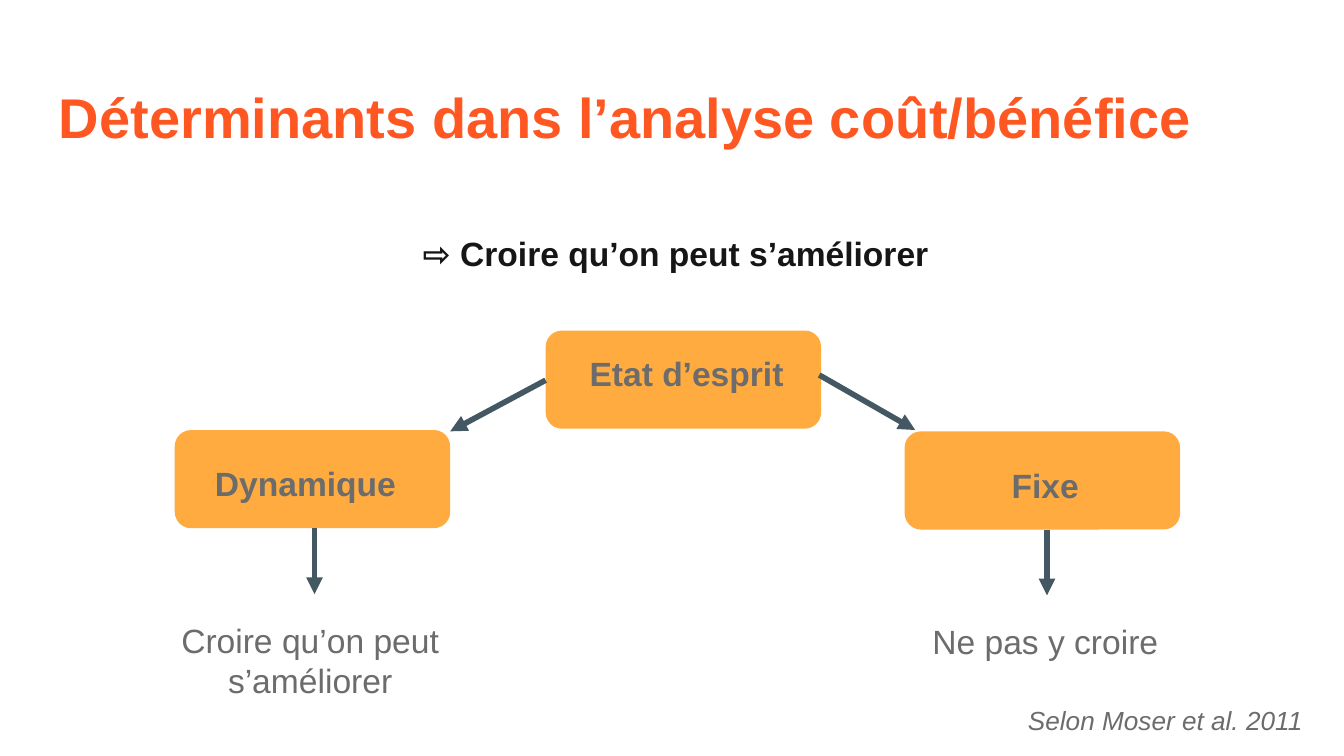
from pptx import Presentation
from pptx.util import Pt
from pptx.dml.color import RGBColor
from pptx.enum.shapes import MSO_CONNECTOR, MSO_SHAPE
from pptx.enum.text import PP_ALIGN
from pptx.oxml.ns import qn
from lxml.etree import SubElement

ORANGE, AMBER, BLACK, GREY, SLATE = "FF5722", "FFAB40", "161616", "6C6C6C", "435863"
CARD_WIDTH, CARD_HEIGHT = 147.6, 52.6


def color(hex_value):
    return RGBColor.from_string(hex_value)


def add_text(slide, box, lines, size=18, hex_value=GREY, bold=True, italic=False,
             align=PP_ALIGN.CENTER, inset=7.2, indent=0, wrap=True):
    frame = slide.shapes.add_textbox(*map(Pt, box)).text_frame
    frame.word_wrap = wrap
    frame.margin_top = frame.margin_bottom = Pt(inset)
    frame.text = "\n".join(lines)
    for paragraph in frame.paragraphs:
        paragraph.alignment = align
        if indent:
            paragraph._p.get_or_add_pPr().set("marL", str(Pt(indent)))
        for run in paragraph.runs:
            font = run.font
            font.name, font.size = "Arial", Pt(size)
            font.bold, font.italic = bold, italic
            font.color.rgb = color(hex_value)
    return frame


def add_card(slide, left, top):
    card = slide.shapes.add_shape(
        MSO_SHAPE.ROUNDED_RECTANGLE, Pt(left), Pt(top), Pt(CARD_WIDTH), Pt(CARD_HEIGHT))
    card.shadow.inherit = False
    card.fill.solid()
    card.fill.fore_color.rgb = color(AMBER)
    card.line.fill.background()


def add_arrow(slide, start, end):
    arrow = slide.shapes.add_connector(MSO_CONNECTOR.STRAIGHT, *map(Pt, (*start, *end)))
    arrow.line.color.rgb = color(SLATE)
    arrow.line.width = Pt(3)
    SubElement(arrow.line._get_or_add_ln(), qn("a:tailEnd"), type="triangle")
    SubElement(arrow._element.spPr, qn("a:effectLst"))


def add_header(slide, left, top, width):
    add_text(slide, (left, top, width, 45.4), ["Déterminants dans l’analyse coût/bénéfice"],
             size=30, hex_value=ORANGE, align=PP_ALIGN.LEFT)
    add_text(slide, (left, top + 80.5, width, 38), ["⇨ Croire qu’on peut s’améliorer "],
             hex_value=BLACK, indent=9)


def add_root(slide, left, top):
    add_card(slide, left, top)
    add_text(slide, (left + 6.5, top + 8.5, 134, 28.8), ["Etat d’esprit "],
             inset=3.6, indent=9, wrap=False)


def add_branch(slide, left, top, label, outcome, text_offset, stem_offset):
    add_card(slide, left, top)
    frame = add_text(slide, (left + text_offset, top + 10.6, 238.3, 139),
                     [label, outcome], indent=9)
    result = frame.paragraphs[1]
    result.space_before = Pt(62.1)
    result.runs[0].font.bold = False
    bottom = top + CARD_HEIGHT
    add_arrow(slide, (left + stem_offset, bottom), (left + stem_offset, bottom + 35.3))


def add_mindset_tree(slide, left, top):
    root_left, fixed_left, branch_top = left + 198.7, left + 391, top + 53.3
    add_root(slide, root_left, top)
    add_branch(slide, left, branch_top, "Dynamique ", "Croire qu’on peut s’améliorer",
               -51.1, 74.9)
    add_branch(slide, fixed_left, branch_top + 0.7, "Fixe", "Ne pas y croire", -48.3, 76.3)
    add_arrow(slide, (root_left, top + 26.6), (left + CARD_WIDTH, branch_top + 0.7))
    add_arrow(slide, (root_left + CARD_WIDTH - 1, top + 23.8),
              (fixed_left + 5.7, branch_top))


def add_citation(slide, left, top, width):
    add_text(slide, (left, top, width, 24.5), ["Selon Moser et al. 2011"], size=14,
             bold=False, italic=True, align=PP_ALIGN.RIGHT, inset=3.6)


def main():
    presentation = Presentation()
    presentation.slide_width, presentation.slide_height = Pt(720), Pt(405)
    slide = presentation.slides.add_slide(presentation.slide_layouts[6])
    add_header(slide, 24.5, 37, 671)
    add_mindset_tree(slide, 93.6, 177.1)
    add_citation(slide, 427, 373.7, 278)
    presentation.save("out.pptx")


if __name__ == "__main__":
    main()
